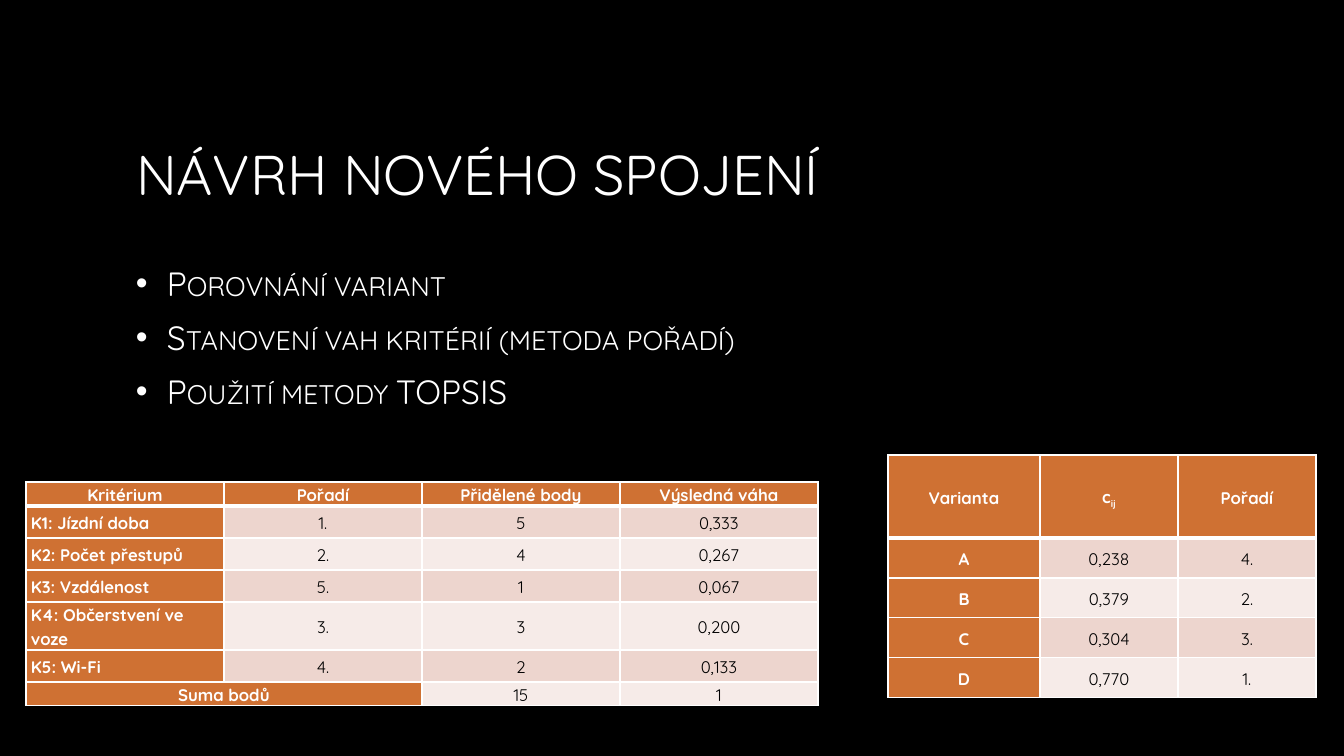
from lxml import etree
from pptx import Presentation
from pptx.dml.color import RGBColor
from pptx.enum.text import MSO_ANCHOR, PP_ALIGN
from pptx.oxml.ns import qn
from pptx.util import Pt

LEFT, CENTER = PP_ALIGN.LEFT, PP_ALIGN.CENTER
MIDDLE = MSO_ANCHOR.MIDDLE
SLIDE_W, SLIDE_H = 1344, 756
EMU_PER_PX = 914400 / 100.8
FONT = "Quicksand"
COLORS = {
    "background": "000000",
    "light": "FFFFFF",
    "dark": "000000",
    "accent": "CF7133",
    "band_odd": "EDD5CE",
    "band_even": "F6EBE8",
}


def px(n):
    return round(n * EMU_PER_PX)


def rgb(name):
    return RGBColor.from_string(COLORS[name])


def add_text(p, text, size=12, color="light", bold=False, **attrs):
    r = p.add_run()
    r.text = text
    r.font.name = FONT
    r.font.size = Pt(size)
    r.font.bold = bold
    r.font.color.rgb = rgb(color)
    for key, value in attrs.items():
        r._r.get_or_add_rPr().set(key, value)


class Deck:
    def __init__(self):
        self.prs = Presentation()
        self.prs.slide_width = px(SLIDE_W)
        self.prs.slide_height = px(SLIDE_H)
        self.s = self.prs.slides.add_slide(self.prs.slide_layouts[5])
        fill = self.s.background.fill
        fill.solid()
        fill.fore_color.rgb = rgb("background")

    def title(self, text, x, y, w, h):
        sp = self.s.shapes.title
        sp.left, sp.top, sp.width, sp.height = map(px, (x, y, w, h))
        tf = sp.text_frame
        tf.word_wrap = True
        tf.vertical_anchor = MIDDLE
        p = tf.paragraphs[0]
        p.alignment = LEFT
        add_text(p, text, size=40)

    def bullets(self, items, x, y, w, h, bottom):
        tf = self.s.shapes.add_textbox(*map(px, (x, y, w, h))).text_frame
        tf.word_wrap = True
        tf.vertical_anchor = MIDDLE
        tf.margin_bottom = px(bottom)
        for i, item in enumerate(items):
            p = tf.paragraphs[0] if i == 0 else tf.add_paragraph()
            p.space_before = Pt(4 if i else 0)
            p.space_after = Pt(6)
            pPr = p._p.get_or_add_pPr()
            pPr.set("marL", str(px(31)))
            pPr.set("indent", str(-px(31)))
            color = etree.SubElement(pPr, qn("a:buClr"))
            etree.SubElement(color, qn("a:srgbClr"), val=COLORS["light"])
            etree.SubElement(pPr, qn("a:buFont"), typeface="Arial")
            etree.SubElement(pPr, qn("a:buChar"), char="•")
            add_text(p, item, size=24, cap="small")

    def borders(self, cell, row):
        tcPr = cell._tc.get_or_add_tcPr()
        widths = {"lnL": 1, "lnR": 1, "lnT": 3 if row == 1 else 1, "lnB": 3 if row == 0 else 1}
        for tag, width in widths.items():
            ln = etree.SubElement(tcPr, qn(f"a:{tag}"), w=str(Pt(width)))
            fill = etree.SubElement(ln, qn("a:solidFill"))
            etree.SubElement(fill, qn("a:srgbClr"), val=COLORS["light"])

    def cell(self, cell, text, row, is_label, align):
        band = "band_odd" if row % 2 else "band_even"
        self.borders(cell, row)
        cell.fill.solid()
        cell.fill.fore_color.rgb = rgb("accent" if is_label else band)
        cell.vertical_anchor = MIDDLE
        cell.margin_left = cell.margin_right = px(5)
        cell.margin_top = cell.margin_bottom = 0
        p = cell.text_frame.paragraphs[0]
        p.alignment = align
        p.line_spacing = 1.15
        base, _, subscript = text.partition("_")
        style = {"color": "light" if is_label else "dark", "bold": is_label}
        add_text(p, base, **style)
        if subscript:
            add_text(p, subscript, baseline="-25000", **style)

    def table(self, rows, x, y, widths, heights, label_align=CENTER):
        frame = self.s.shapes.add_table(
            len(rows), len(widths), px(x), px(y), px(sum(widths)), px(sum(heights)))
        tbl = frame.table
        for column, width in zip(tbl.columns, widths):
            column.width = px(width)
        for row, height in zip(tbl.rows, heights):
            row.height = px(height)
        for i, values in enumerate(rows):
            span = len(widths) - len(values)
            if span:
                tbl.cell(i, 0).merge(tbl.cell(i, span))
            for j, text in enumerate(values):
                align = label_align if i and j == 0 and not span else CENTER
                cell = tbl.cell(i, j + span if j else 0)
                self.cell(cell, text, i, i == 0 or j == 0, align)


def main():
    deck = Deck()
    deck.title("NÁVRH NOVÉHO SPOJENÍ", 126, 68, 1092, 210)
    deck.bullets(
        ["Porovnání variant", "Stanovení vah kritérií (metoda pořadí)", "Použití metody TOPSIS"],
        126, 187, 1092, 345, bottom=50)
    variants = [
        ["Varianta", "c_ij", "Pořadí"],
        ["A", "0,238", "4."],
        ["B", "0,379", "2."],
        ["C", "0,304", "3."],
        ["D", "0,770", "1."],
    ]
    deck.table(variants, 888, 455, [152, 138, 138], [83] + [40] * 4)
    criteria = [
        ["Kritérium", "Pořadí", "Přidělené body", "Výsledná váha"],
        ["K1: Jízdní doba", "1.", "5", "0,333"],
        ["K2: Počet přestupů", "2.", "4", "0,267"],
        ["K3: Vzdálenost", "5.", "1", "0,067"],
        ["K4: Občerstvení ve voze", "3.", "3", "0,200"],
        ["K5: Wi-Fi", "4.", "2", "0,133"],
        ["Suma bodů", "15", "1"],
    ]
    deck.table(criteria, 26, 482, [198] * 4, [24, 32, 32, 32, 48, 32, 24], label_align=LEFT)
    deck.prs.save("out.pptx")


if __name__ == "__main__":
    main()
